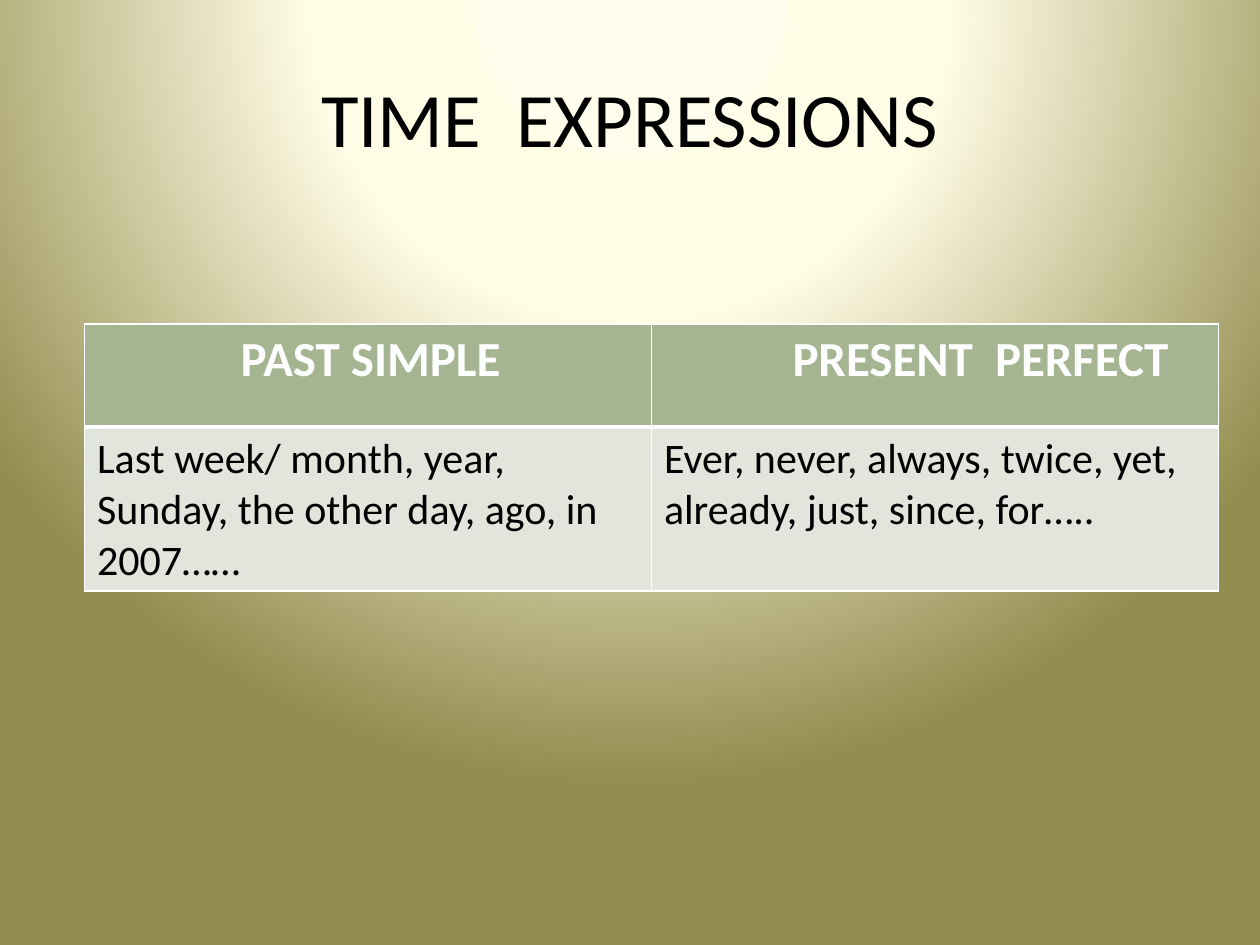
"""Build a slide that compares time expressions of two English tenses."""
from dataclasses import dataclass

import pptx
import pptx.dml.color
import pptx.enum.text
import pptx.oxml
import pptx.oxml.ns
import pptx.util

Inches = pptx.util.Inches
Pt = pptx.util.Pt
RGB = pptx.dml.color.RGBColor.from_string


@dataclass(frozen=True)
class Theme:
    """Colours, font and type sizes of the slide."""
    font: str = "Calibri"
    ink: str = "000000"
    white: str = "FFFFFF"
    header: str = "A5B592"
    body: str = "E1E5DC"
    glow: tuple = ((0, "FFFDEB"), (40, "FFFDE6"), (100, "938D4F"))
    title_size: int = 44
    header_size: int = 28
    body_size: int = 24
    thin: int = 1
    thick: int = 3


THEME = Theme()
HEADINGS = (("PAST SIMPLE", 1.24), ("PRESENT  PERFECT", 1.12))
EXPRESSIONS = (
    "Last week/ month, year, Sunday, the other day, ago, in 2007……",
    "Ever, never, always, twice, yet, already, just, since, for…..",
)


def set_background(s):
    """Fill the slide with a round glow centred above its top edge."""
    stops = "".join(
        f'<a:gs pos="{pos * 1000}"><a:srgbClr val="{color}"/></a:gs>'
        for pos, color in THEME.glow)
    bg = pptx.oxml.parse_xml(
        f'<p:bg {pptx.oxml.ns.nsdecls("p", "a")}><p:bgPr><a:gradFill rotWithShape="1">'
        f'<a:gsLst>{stops}</a:gsLst><a:path path="circle">'
        '<a:fillToRect l="50000" t="-80000" r="50000" b="180000"/>'
        '</a:path></a:gradFill><a:effectLst/></p:bgPr></p:bg>')
    s.element.cSld.insert(0, bg)


def style_text(p, size, color, bold=False):
    """Set the font of a paragraph."""
    p.font.name = THEME.font
    p.font.size = Pt(size)
    p.font.bold = bold
    p.font.color.rgb = RGB(color)


def add_title(s, left, top, width, height):
    """Place the centred title in the given box."""
    sp = s.shapes.add_textbox(left, top, width, height)
    tf = sp.text_frame
    tf.word_wrap = True
    tf.vertical_anchor = pptx.enum.text.MSO_ANCHOR.MIDDLE
    p = tf.paragraphs[0]
    p.text = "TIME  EXPRESSIONS"
    p.alignment = pptx.enum.text.PP_ALIGN.CENTER
    style_text(p, THEME.title_size, THEME.ink)


def set_borders(cell, top, bottom):
    """Draw white borders around a cell, with the given top and bottom widths."""
    widths = {"L": THEME.thin, "R": THEME.thin, "T": top, "B": bottom}
    tc_pr = cell._tc.get_or_add_tcPr()
    for i, (side, width) in enumerate(widths.items()):
        tc_pr.insert(i, pptx.oxml.parse_xml(
            f'<a:ln{side} {pptx.oxml.ns.nsdecls("a")} w="{Pt(width)}"><a:solidFill>'
            f'<a:srgbClr val="{THEME.white}"/></a:solidFill></a:ln{side}>'))


def fill_cell(cell, text, size, color, fill, bold=False):
    """Write text into a cell and colour it."""
    p = cell.text_frame.paragraphs[0]
    p.text = text
    style_text(p, size, color, bold)
    cell.fill.solid()
    cell.fill.fore_color.rgb = RGB(fill)


def add_tense_table(s, left, top, width, height):
    """Place the two-column table of tenses in the given box."""
    table = s.shapes.add_table(2, len(HEADINGS), left, top, width, height).table
    table.rows[0].height = Inches(0.82)
    table.rows[1].height = height - Inches(0.82)
    for col, ((heading, indent), words) in enumerate(zip(HEADINGS, EXPRESSIONS)):
        head, body = table.cell(0, col), table.cell(1, col)
        fill_cell(head, heading, THEME.header_size, THEME.white, THEME.header, True)
        head.margin_left = Inches(indent)
        set_borders(head, THEME.thin, THEME.thick)
        fill_cell(body, words, THEME.body_size, THEME.ink, THEME.body)
        set_borders(body, THEME.thick, THEME.thin)


def main():
    """Build and save the presentation."""
    prs = pptx.Presentation()
    prs.slide_width, prs.slide_height = Inches(10), Inches(7.5)
    s = prs.slides.add_slide(prs.slide_layouts[6])
    set_background(s)
    add_title(s, Inches(0.5), Inches(0.3), Inches(9), Inches(1.25))
    add_tense_table(s, Inches(0.67), Inches(2.57), Inches(9), Inches(2.12))
    prs.save("out.pptx")


if __name__ == "__main__":
    main()
